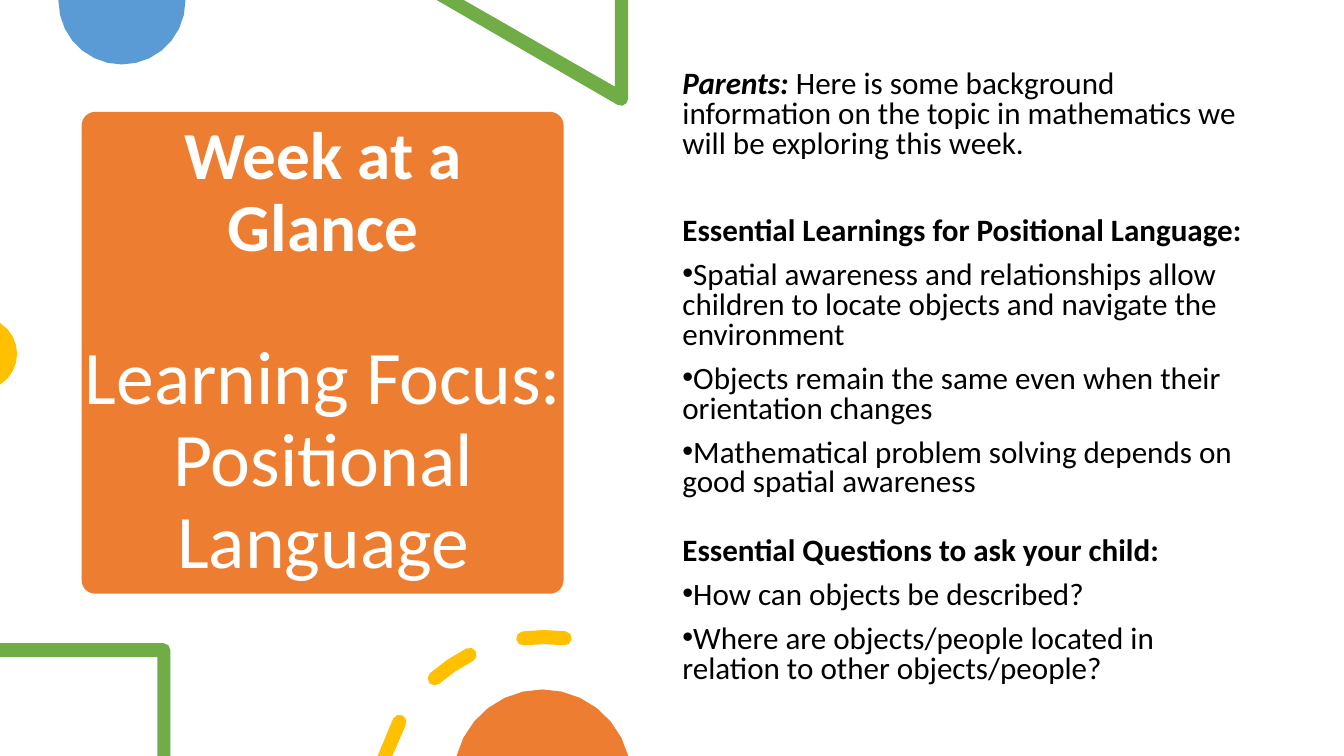
"""Build the weekly overview slide about positional language."""
from math import cos, radians, sin

from lxml import etree
from pptx import Presentation
from pptx.dml.color import RGBColor
from pptx.enum.shapes import MSO_SHAPE
from pptx.enum.text import MSO_ANCHOR, PP_ALIGN
from pptx.oxml.ns import qn
from pptx.util import Inches, Pt

ROUNDED = MSO_SHAPE.ROUNDED_RECTANGLE
MIDDLE = MSO_ANCHOR.MIDDLE
CENTER = PP_ALIGN.CENTER
ORANGE = RGBColor(0xED, 0x7D, 0x31)
BLUE = RGBColor(0x5B, 0x9B, 0xD5)
GREEN = RGBColor(0x70, 0xAD, 0x47)
YELLOW = RGBColor(0xFF, 0xC0, 0x00)
WHITE = RGBColor(0xFF, 0xFF, 0xFF)
BLACK = RGBColor(0x00, 0x00, 0x00)

deck = Presentation()
deck.slide_width, deck.slide_height = Inches(13.33), Inches(7.5)
page = deck.slides.add_slide(deck.slide_layouts[6])


def arc(x, y, radius, start, end, steps):
    """Return points along an arc, with angles running clockwise from the right."""
    angles = [radians(start + (end - start) * i / steps) for i in range(steps + 1)]
    return [(x + radius * cos(a), y + radius * sin(a)) for a in angles]


def add_span(para, text, **formats):
    """Add a run of text with the given font formats."""
    span = para.add_run()
    span.text = text
    span.font.color.rgb = formats.pop("color")
    for name, value in ({"name": "Calibri"} | formats).items():
        setattr(span.font, name, value)


card = page.shapes.add_shape(ROUNDED, Inches(0.81), Inches(1.11), Inches(4.78), Inches(4.78))
card.adjustments[0] = 0.028
card.shadow.inherit = False
card.fill.solid()
card.fill.fore_color.rgb = ORANGE
card.line.fill.background()

ring_x, ring_y, ring_radius, half_width = 5.4, 7.97, 1.65, 0.07
outer, inner = ring_radius + half_width, ring_radius - half_width
cut_cap = arc(ring_x, ring_y, ring_radius, 195.86, 209.4, 1)[1]
dashes = [[arc(ring_x, ring_y, outer, 195.86, 209.4, 1)[0],
           *arc(*cut_cap, half_width, 209.4, 389.4, 4),
           arc(ring_x, ring_y, inner, 209.4, 197.3, 1)[1]]]
for start, end in [(228.7, 243.3), (262.7, 277)]:
    first_cap, last_cap = arc(ring_x, ring_y, ring_radius, start, end, 1)
    middle = (start + end) / 2
    dashes.append(arc(ring_x, ring_y, outer, middle, middle, 1)[:1]
                  + arc(*last_cap, half_width, end, end + 180, 4)
                  + arc(ring_x, ring_y, inner, middle, middle, 1)[:1]
                  + arc(*first_cap, half_width, start + 180, start + 360, 4))

triangle = [(6.23, 0), (6.1, 0), (6.1, 0.86), (4.6, 0), (4.33, 0),
            *arc(6.16, 0.98, 0.07, 120, 0, 3)]
square = [(0, 6.38), (0, 6.52), (1.56, 6.52), (1.56, 7.5), (1.69, 7.5),
          *arc(1.62, 6.45, 0.07, 360, 270, 2)]
decorations = [
    (BLUE, [[(1.84, 0), (0.58, 0), *arc(1.21, 0.01, 0.63, 180, 0, 14)]]),
    (GREEN, [triangle]),
    (YELLOW, [arc(-0.19, 3.51, 0.36, -58, 58, 8)]),
    (GREEN, [square]),
    (YELLOW, dashes),
    (ORANGE, [arc(5.38, 7.72, 0.88, 194.5, 345.5, 12)]),
]
for color, outlines in decorations:
    contours = [[(Inches(x), Inches(y)) for x, y in outline] for outline in outlines]
    builder = page.shapes.build_freeform(*contours[0][0])
    builder.add_line_segments(contours[0][1:], close=True)
    for contour in contours[1:]:
        builder.move_to(*contour[0])
        builder.add_line_segments(contour[1:], close=True)
    decoration = builder.convert_to_shape()
    decoration.shadow.inherit = False
    decoration.fill.solid()
    decoration.fill.fore_color.rgb = color
    decoration.line.fill.background()

title = page.shapes.add_textbox(Inches(0.72), Inches(1.22), Inches(4.97), Inches(4.56)).text_frame
title.word_wrap = True
title.vertical_anchor = MIDDLE
heading, focus = title.paragraphs[0], title.add_paragraph()
add_span(heading, "Week at a Glance", size=Pt(48), bold=True, color=WHITE)
add_span(focus, "Learning Focus:", size=Pt(54), color=WHITE)
focus.add_line_break()
add_span(focus, "Positional Language", size=Pt(54), color=WHITE)
focus.space_before = Pt(52.5)
for para in title.paragraphs:
    para.alignment = CENTER
    para.line_spacing = 0.9

PLAIN, BOLD, LEAD = {}, {"bold": True}, {"bold": True, "italic": True}
paragraphs = [
    (0, False, [("Parents: ", LEAD),
                ("Here is some background information on the topic in mathematics "
                 "we will be exploring this week.", PLAIN)]),
    (41.5, False, [("Essential Learnings for Positional Language:", BOLD)]),
    (10, True, [("Spatial awareness and relationships allow children to locate objects "
                 "and navigate the environment", PLAIN)]),
    (10, True, [("Objects remain the same even when their orientation changes", PLAIN)]),
    (10, True, [("Mathematical problem solving depends on good spatial awareness", PLAIN)]),
    (28, False, [("Essential Questions to ask your child:", BOLD)]),
    (10, True, [("How can objects be described?", PLAIN)]),
    (10, True, [("Where are objects/people located in relation to other objects/people?", PLAIN)]),
]
body = page.shapes.add_textbox(Inches(6.67), Inches(0.65), Inches(5.86), Inches(6.2)).text_frame
body.word_wrap = True
for index, (gap, bulleted, spans) in enumerate(paragraphs):
    para = body.add_paragraph() if index else body.paragraphs[0]
    para.line_spacing = 0.8
    para.space_before = Pt(gap)
    if bulleted:
        properties = para._p.get_or_add_pPr()
        properties.set("marL", "0")
        properties.set("indent", str(-Inches(0.25)))
        etree.SubElement(properties, qn("a:buFont")).set("typeface", "Arial")
        etree.SubElement(properties, qn("a:buChar")).set("char", "•")
    for text, formats in spans:
        add_span(para, text, size=Pt(22.2), color=BLACK, **formats)

deck.save("out.pptx")
